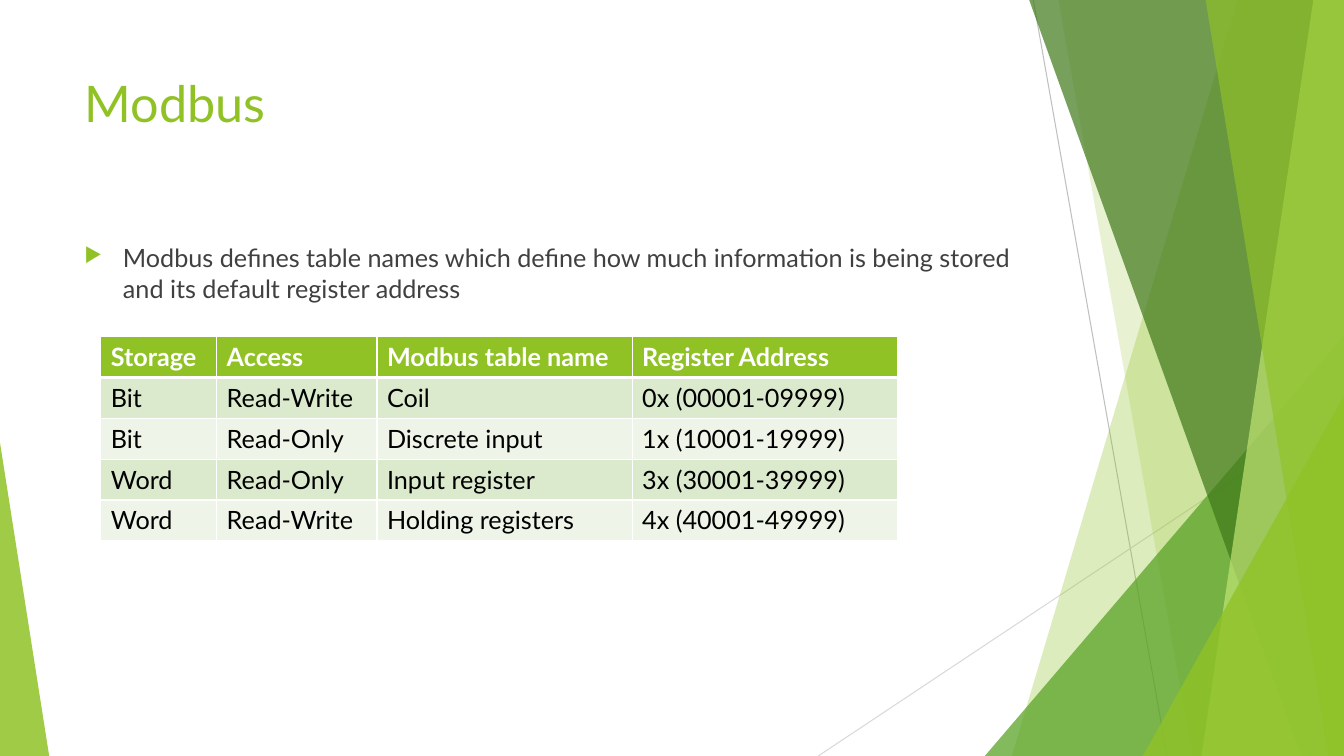
from lxml import etree
from pptx import Presentation
from pptx.dml.color import RGBColor
from pptx.enum.shapes import MSO_CONNECTOR, MSO_SHAPE
from pptx.enum.text import MSO_ANCHOR
from pptx.oxml.ns import qn
from pptx.util import Cm, Pt

STRAIGHT = MSO_CONNECTOR.STRAIGHT
TRIANGLE = MSO_SHAPE.ISOSCELES_TRIANGLE
TOP = MSO_ANCHOR.TOP

WIDTH, HEIGHT = 33.87, 19.05
GREEN, LEAF, FOREST, LIME = "90C226", "54A021", "3F7819", "C0E474"
WHITE, BLACK, GREY = "FFFFFF", "000000", "404040"
ROW_FILLS = ("EEF4E8", "DBE9CD")
STORAGE_ROWS = [
    ("Storage", "Access", "Modbus table name", "Register Address"),
    ("Bit", "Read-Write", "Coil", "0x (00001-09999)"),
    ("Bit", "Read-Only", "Discrete input", "1x (10001-19999)"),
    ("Word", "Read-Only", "Input register", "3x (30001-39999)"),
    ("Word", "Read-Write", "Holding registers", "4x (40001-49999)"),
]


def rgb(color):
    return RGBColor.from_string(color)


def add_xml(parent, tag, **attributes):
    return etree.SubElement(parent, qn(tag), attributes)


def write(frame, text, size=18, color=BLACK, bold=False, bullet=None):
    para = frame.paragraphs[0]
    if bullet:
        props = para._p.get_or_add_pPr()
        indent = Cm(0.97)
        props.set("marL", str(indent))
        props.set("indent", str(-indent))
        add_xml(add_xml(props, "a:buClr"), "a:srgbClr", val=GREEN)
        add_xml(props, "a:buSzPct", val="80000")
        add_xml(props, "a:buChar", char=bullet)
    span = para.add_run()
    span.text = text
    font = span.font
    font.name, font.size, font.bold = "Lato", Pt(size), bold
    font.color.rgb = rgb(color)


class FacetSlide:
    def __init__(self, deck):
        self.shapes = deck.slides.add_slide(deck.slide_layouts[6]).shapes

    def line(self, start, end, color):
        points = [Cm(value) for value in (*start, *end)]
        line = self.shapes.add_connector(STRAIGHT, *points)
        line.line.color.rgb = rgb(color)
        line.line.width = Pt(0.75)
        add_xml(line._element.spPr, "a:effectLst")

    def paint(self, shape, color, opacity):
        shape.shadow.inherit = False
        shape.line.fill.background()
        shape.fill.solid()
        shape.fill.fore_color.rgb = rgb(color)
        srgb = shape._element.spPr.find(".//" + qn("a:srgbClr"))
        add_xml(srgb, "a:alpha", val=str(opacity * 1000))

    def band(self, top_x, bottom_x, color, opacity):
        """Fill from a slanted left edge to the right side of the slide."""
        top = Cm(-0.02)
        builder = self.shapes.build_freeform(Cm(top_x), top)
        builder.add_line_segments([
            (Cm(WIDTH), top), (Cm(WIDTH), Cm(HEIGHT)), (Cm(bottom_x), Cm(HEIGHT))])
        self.paint(builder.convert_to_shape(), color, opacity)

    def corner(self, left, width, height, apex, color, opacity):
        """Stand a triangle on the bottom edge, with its apex at 0 (left) to 1 (right)."""
        shape = self.shapes.add_shape(
            TRIANGLE, Cm(left), Cm(HEIGHT - height), Cm(width), Cm(height))
        shape.adjustments[0] = apex
        self.paint(shape, color, opacity)

    def text(self, top, height, text, **style):
        box = self.shapes.add_textbox(Cm(1.88), Cm(top), Cm(23.88), Cm(height))
        frame = box.text_frame
        frame.word_wrap = True
        frame.vertical_anchor = TOP
        write(frame, text, **style)

    def borders(self, cell, top, bottom):
        props = cell._tc.get_or_add_tcPr()
        for side, width in (("L", 1), ("R", 1), ("T", top), ("B", bottom)):
            edge = add_xml(props, "a:ln" + side, w=str(Pt(width)))
            add_xml(add_xml(edge, "a:solidFill"), "a:srgbClr", val=WHITE)

    def table(self, left, top, widths, row_height, rows):
        table = self.shapes.add_table(
            len(rows), len(widths), Cm(left), Cm(top),
            Cm(sum(widths)), Cm(row_height * len(rows))).table
        for column, width in zip(table.columns, widths):
            column.width = Cm(width)
        for r, row in enumerate(rows):
            table.rows[r].height = Cm(row_height)
            header = r == 0
            for c, text in enumerate(row):
                cell = table.cell(r, c)
                self.borders(cell, 3 if r == 1 else 1, 3 if header else 1)
                cell.fill.solid()
                cell.fill.fore_color.rgb = rgb(GREEN if header else ROW_FILLS[r % 2])
                write(cell.text_frame, text, color=WHITE if header else BLACK, bold=header)


def main():
    deck = Presentation()
    deck.slide_width, deck.slide_height = Cm(WIDTH), Cm(HEIGHT)
    slide = FacetSlide(deck)

    slide.line((26.04, 0), (29.41, HEIGHT), "BFBFBF")
    slide.line((WIDTH, 10.24), (20.62, HEIGHT), "D9D9D9")
    slide.band(31.19, 25.5, GREEN, 30)
    slide.band(26.67, 30.05, GREEN, 20)
    slide.corner(24.82, 9.05, 10.59, 1, LEAF, 72)
    slide.band(25.93, 32.79, FOREST, 70)
    slide.band(33.1, 30.28, LIME, 70)
    slide.band(30.38, 33.48, GREEN, 65)
    slide.corner(28.8, 5.07, 9.07, 1, GREEN, 80)
    slide.corner(0, 1.24, 7.9, 0, GREEN, 85)

    slide.text(1.7, 3.66, "Modbus", size=36, color=GREEN)
    slide.text(
        5.99, 10.77,
        "Modbus defines table names which define how much information "
        "is being stored and its default register address",
        color=GREY, bullet="▶")
    slide.table(2.54, 8.48, (2.92, 4.04, 6.43, 6.68), 1.03, STORAGE_ROWS)
    deck.save("out.pptx")


if __name__ == "__main__":
    main()
